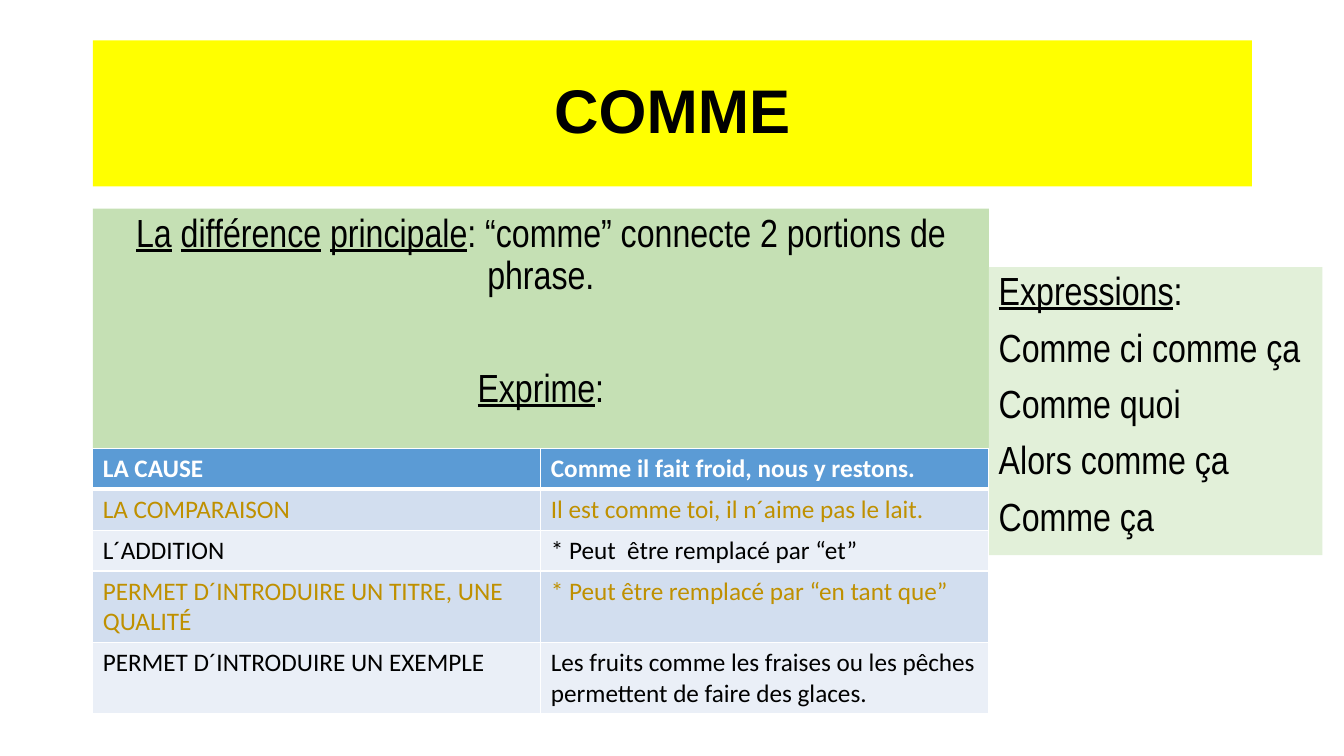
from dataclasses import dataclass

from lxml import etree
from pptx import Presentation
from pptx.dml.color import RGBColor
from pptx.enum.text import MSO_ANCHOR, PP_ALIGN
from pptx.oxml.ns import qn
from pptx.util import Cm, Pt

LEFT, CENTER = PP_ALIGN.LEFT, PP_ALIGN.CENTER
TOP, MIDDLE = MSO_ANCHOR.TOP, MSO_ANCHOR.MIDDLE
BLACK, WHITE, GOLD = "000000", "FFFFFF", "BF9000"
BLUE, BAND_DARK, BAND_LIGHT = "5B9BD5", "D2DEEF", "EAEFF7"
NARROW = {"name": "Arial Narrow", "size": Pt(28)}
LEFT_EDGE, BODY_WIDTH = 2.34, 22.58


@dataclass(frozen=True)
class Span:
    text: str
    underline: bool = False


@dataclass(frozen=True)
class Para:
    spans: tuple[Span, ...]
    space_before: float = 10


@dataclass(frozen=True)
class Panel:
    left: float
    top: float
    width: float
    height: float
    fill: str
    paras: tuple[Para, ...]
    font: dict
    align: PP_ALIGN = LEFT
    anchor: MSO_ANCHOR = TOP


@dataclass(frozen=True)
class Usage:
    meaning: str
    example: str
    height: float
    fill: str
    color: str
    bold: bool = False


PANELS = (
    Panel(LEFT_EDGE, 1.02, 29.21, 3.68, "FFFF00",
          (Para((Span("COMME"),), 0),),
          {"name": "Arial", "size": Pt(44), "bold": True}, CENTER, MIDDLE),
    Panel(LEFT_EDGE, 5.26, BODY_WIDTH, 12.7, "C5E0B4",
          (Para((Span("La", True), Span(" "), Span("différence", True), Span(" "),
                 Span("principale", True),
                 Span(": “comme” connecte 2 portions de phrase."))),
           Para((Span("Exprime", True), Span(":")), 50)),
          NARROW, CENTER),
    Panel(24.92, 6.73, 8.41, 7.26, "E2F0D9",
          (Para((Span("Expressions", True), Span(":"))),
           *(Para((Span(phrase),)) for phrase in (
               "Comme ci comme ça", "Comme quoi", "Alors comme ça", "Comme ça"))),
          NARROW),
)

USAGES = (
    Usage("LA CAUSE", "Comme il fait froid, nous y restons.",
          1.03, BLUE, WHITE, True),
    Usage("LA COMPARAISON", "Il est comme toi, il n´aime pas le lait.",
          1.03, BAND_DARK, GOLD),
    Usage("L´ADDITION", "* Peut  être remplacé par “et”",
          1.03, BAND_LIGHT, BLACK),
    Usage("PERMET D´INTRODUIRE UN TITRE, UNE QUALITÉ",
          "* Peut être remplacé par “en tant que”", 1.8, BAND_DARK, GOLD),
    Usage("PERMET D´INTRODUIRE UN EXEMPLE",
          "Les fruits comme les fraises ou les pêches permettent de faire des glaces.",
          1.8, BAND_LIGHT, BLACK),
)


def paint(fill, color: str) -> None:
    fill.solid()
    fill.fore_color.rgb = RGBColor.from_string(color)


def set_values(target, values: dict) -> None:
    for name, value in values.items():
        setattr(target, name, value)


def add_span(para, text: str, color: str, values: dict) -> None:
    run = para.add_run()
    run.text = text
    set_values(run.font, values)
    paint(run.font.fill, color)


def add_panel(page, panel: Panel) -> None:
    box = page.shapes.add_textbox(
        Cm(panel.left), Cm(panel.top), Cm(panel.width), Cm(panel.height))
    paint(box.fill, panel.fill)
    frame = box.text_frame
    set_values(frame, {"word_wrap": True, "vertical_anchor": panel.anchor})
    for index, content in enumerate(panel.paras):
        para = frame.add_paragraph() if index else frame.paragraphs[0]
        set_values(para, {"alignment": panel.align, "line_spacing": 0.9,
                          "space_before": Pt(content.space_before)})
        for span in content.spans:
            add_span(para, span.text, BLACK,
                     panel.font | {"underline": span.underline})


def set_borders(cell, widths: dict[str, float]) -> None:
    properties = cell._tc.get_or_add_tcPr()
    for index, (side, width) in enumerate(widths.items()):
        line = etree.Element(qn(f"a:ln{side}"), w=str(Pt(width)))
        solid = etree.SubElement(line, qn("a:solidFill"))
        etree.SubElement(solid, qn("a:srgbClr"), val=WHITE)
        properties.insert(index, line)


def add_usage_table(page, usages: tuple[Usage, ...]) -> None:
    height = sum(usage.height for usage in usages)
    table = page.shapes.add_table(
        len(usages), 2, Cm(LEFT_EDGE), Cm(11.3), Cm(BODY_WIDTH), Cm(height)).table
    for row_index, usage in enumerate(usages):
        table.rows[row_index].height = Cm(usage.height)
        top = 3 if row_index == 1 else 1
        bottom = 3 if row_index == 0 else 1
        for column, text in enumerate((usage.meaning, usage.example)):
            cell = table.cell(row_index, column)
            paint(cell.fill, usage.fill)
            set_borders(cell, {"L": 1, "R": 1, "T": top, "B": bottom})
            add_span(cell.text_frame.paragraphs[0], text, usage.color,
                     {"name": "Calibri", "size": Pt(18), "bold": usage.bold})


def main() -> None:
    deck = Presentation()
    set_values(deck, {"slide_width": Cm(33.87), "slide_height": Cm(19.05)})
    page = deck.slides.add_slide(deck.slide_layouts[6])
    for panel in PANELS:
        add_panel(page, panel)
    add_usage_table(page, USAGES)
    deck.save("out.pptx")


if __name__ == "__main__":
    main()
